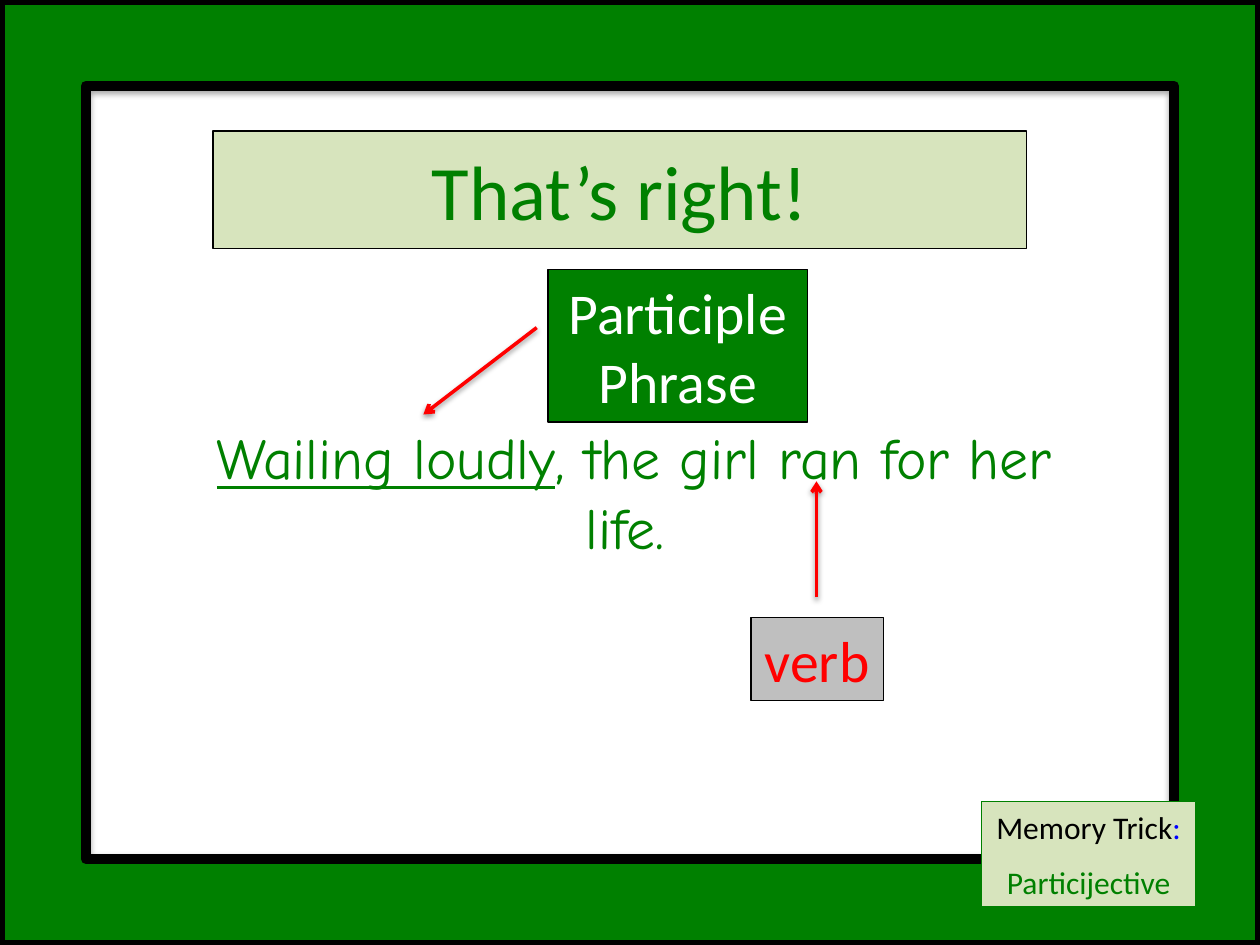
"""Build the quiz feedback slide about a participle phrase."""
import lxml.etree
import pptx
import pptx.dml.color
import pptx.enum.shapes
import pptx.enum.text
import pptx.oxml
import pptx.oxml.ns
import pptx.util

Inches, Pt = pptx.util.Inches, pptx.util.Pt
SHAPES = pptx.enum.shapes.MSO_SHAPE
CENTER = pptx.enum.text.PP_ALIGN.CENTER
COLORS = {"green": "008000", "pale": "D7E4BD", "gray": "BFBFBF", "red": "FF0000",
          "blue": "0000FF", "black": "000000", "white": "FFFFFF"}

TITLE = {"at": (1.69, 1.04, 6.46, 0.93), "fill": "pale", "line": "black", "size": 44,
         "paras": [[("That’s right!", "green")]]}
SENTENCE = [("Wailing loudly", True), (", the girl ran for her life. ", False)]
LABELS = [
    {"at": (7.79, 6.36, 1.7, 0.84), "fill": "pale", "line": "green", "size": 18, "wrap": False,
     "paras": [[("Memory Trick", "black"), (":", "blue")], [("Particijective", "green")]]},
    {"at": (5.96, 4.9, 1.05, 0.66), "fill": "gray", "line": "black", "size": 33, "wrap": False,
     "paras": [[("verb", "red")]]},
    {"at": (4.35, 2.14, 2.06, 1.21), "fill": "green", "line": "black", "size": 33, "wrap": True,
     "paras": [[("Participle Phrase", "white")]]},
]
ARROWS = [(4.26, 2.6, 3.36, 3.29), (6.48, 4.74, 6.48, 3.82)]


def rgb(name):
    return pptx.dml.color.RGBColor.from_string(COLORS[name])


def place(shape, at):
    shape.left, shape.top, shape.width, shape.height = map(Inches, at)


def paint(shape, fill, line, width=0.75):
    shape.fill.solid()
    shape.fill.fore_color.rgb = rgb(fill)
    shape.line.color.rgb = rgb(line)
    shape.line.width = Pt(width)


def add_shadow(shape, distance, opacity):
    properties = shape._element.spPr
    properties.append(pptx.oxml.parse_xml(
        f'<a:effectLst {pptx.oxml.ns.nsdecls("a")}>'
        f'<a:outerShdw blurRad="{Pt(3.1)}" dist="{Pt(distance)}" dir="5400000" rotWithShape="0">'
        f'<a:srgbClr val="{COLORS["black"]}"><a:alpha val="{opacity * 1000}"/></a:srgbClr>'
        '</a:outerShdw></a:effectLst>'))


def write(shape, paras, size):
    frame = shape.text_frame
    for index, spans in enumerate(paras):
        para = frame.add_paragraph() if index else frame.paragraphs[0]
        para.alignment = CENTER
        para.font.name, para.font.size = "Calibri", Pt(size)
        para.space_before = Pt(10 if index else 0)
        for text, color in spans:
            span = para.add_run()
            span.text = text
            span.font.color.rgb = rgb(color)


def fill_title(page):
    title = page.shapes.title
    place(title, TITLE["at"])
    paint(title, TITLE["fill"], TITLE["line"])
    title.text_frame.vertical_anchor = pptx.enum.text.MSO_ANCHOR.MIDDLE
    write(title, TITLE["paras"], TITLE["size"])


def fill_sentence(page):
    body = page.placeholders[1]
    place(body, (1.51, 1.97, 7.05, 4.76))
    body.text_frame.margin_top = Inches(1.38)
    para = body.text_frame.paragraphs[0]
    para.alignment, para.space_before = CENTER, Pt(0)
    para.font.name, para.font.size = "Comic Neue", Pt(33)
    para.font.color.rgb = rgb("green")
    settings = para._p.get_or_add_pPr()
    settings.set("marL", "0")
    settings.set("indent", "0")
    bullet = lxml.etree.Element(pptx.oxml.ns.qn("a:buNone"))
    settings.find(pptx.oxml.ns.qn("a:defRPr")).addprevious(bullet)
    for text, underlined in SENTENCE:
        span = para.add_run()
        span.text = text
        span.font.underline = underlined


def add_frame(page, deck):
    frame = page.shapes.add_shape(SHAPES.FRAME, 0, 0, deck.slide_width, deck.slide_height)
    frame.adjustments[0] = 0.091
    paint(frame, "green", "black", 6)
    add_shadow(frame, 1.8, 35)


def add_label(page, label):
    box = page.shapes.add_shape(SHAPES.RECTANGLE, *map(Inches, label["at"]))
    box.shadow.inherit = False
    paint(box, label["fill"], label["line"])
    box.text_frame.word_wrap = label["wrap"]
    box.text_frame.auto_size = pptx.enum.text.MSO_AUTO_SIZE.SHAPE_TO_FIT_TEXT
    write(box, label["paras"], label["size"])


def add_arrow(page, ends):
    arrow = page.shapes.add_connector(pptx.enum.shapes.MSO_CONNECTOR.STRAIGHT, *map(Inches, ends))
    arrow.line.color.rgb = rgb("red")
    arrow.line.width = Pt(2)
    head = lxml.etree.SubElement(arrow.line._get_or_add_ln(), pptx.oxml.ns.qn("a:tailEnd"))
    head.set("type", "arrow")
    add_shadow(arrow, 1.6, 38)


def main():
    deck = pptx.Presentation()
    deck.slide_width, deck.slide_height = Inches(10), Inches(7.5)
    page = deck.slides.add_slide(deck.slide_layouts[1])
    fill_title(page)
    fill_sentence(page)
    add_frame(page, deck)
    for label in LABELS:
        add_label(page, label)
    for ends in ARROWS:
        add_arrow(page, ends)
    deck.save("out.pptx")


if __name__ == "__main__":
    main()
